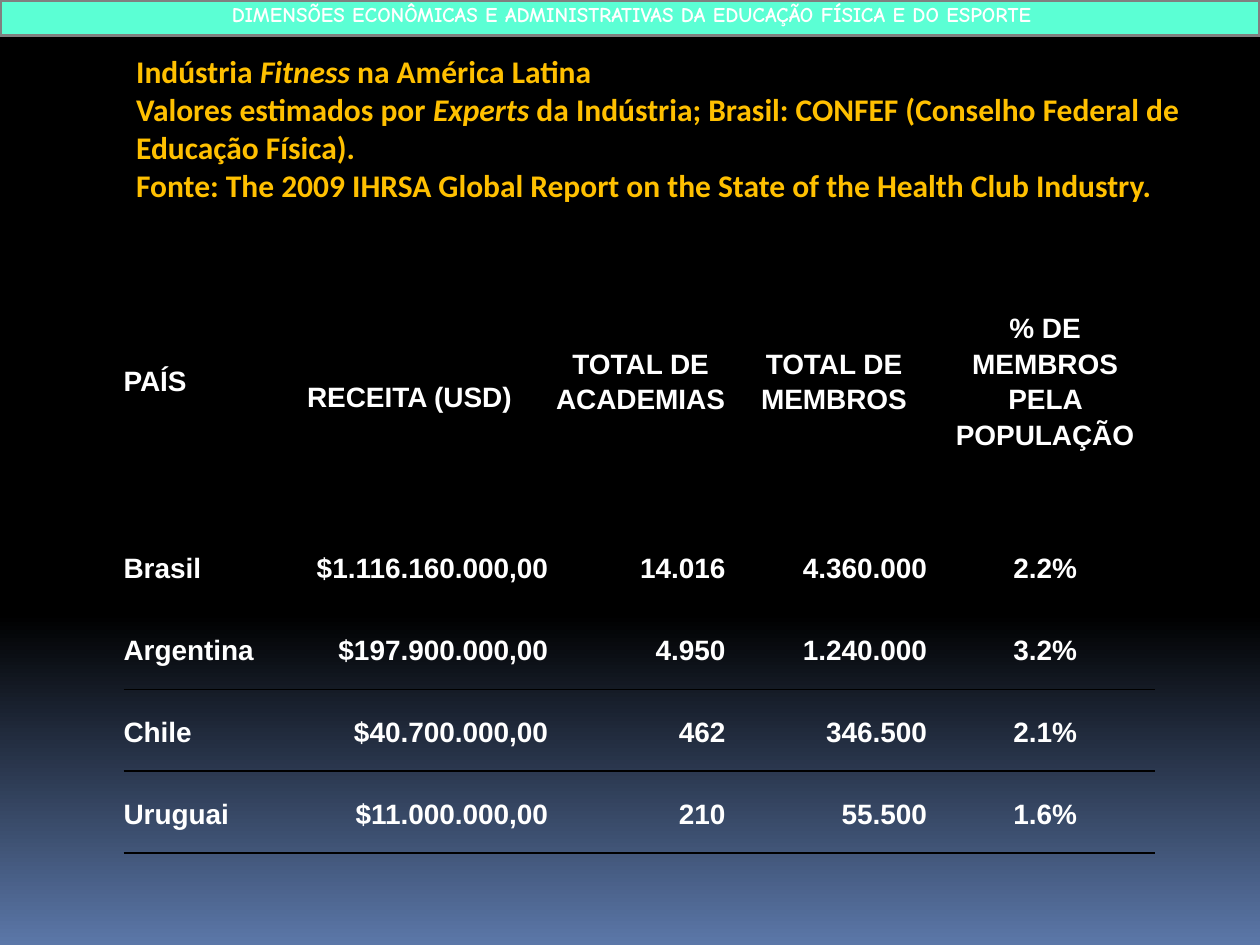
"""Build the slide on the fitness industry in Latin America."""
from copy import deepcopy
from dataclasses import dataclass
from typing import Any

from lxml.etree import SubElement
from pptx import Presentation
from pptx.dml.color import RGBColor
from pptx.enum.shapes import MSO_SHAPE
from pptx.enum.text import MSO_ANCHOR, MSO_AUTO_SIZE, PP_ALIGN
from pptx.oxml import parse_xml
from pptx.oxml.ns import nsdecls, qn
from pptx.util import Pt


@dataclass(frozen=True)
class Theme:
    """Colours, fonts and type sizes of the slide."""
    white: str = "FFFFFF"
    black: str = "000000"
    gold: str = "FFC000"
    mint: str = "5BFFD4"
    grey: str = "808080"
    blue: str = "5B77A8"
    band_font: str = "Comic Neue"
    title_font: str = "Calibri"
    table_font: str = "Arial"
    band_size: int = 12
    title_size: int = 18
    table_size: int = 16


@dataclass(frozen=True)
class Column:
    """One table column with its heading and body layout."""
    heading: tuple[str, ...]
    width: float
    align: PP_ALIGN
    heading_align: PP_ALIGN = PP_ALIGN.CENTER
    heading_top: float = 0
    body_right: float = 0


THEME = Theme()
BAND_TEXT = "DIMENSÕES ECONÔMICAS E ADMINISTRATIVAS DA EDUCAÇÃO FÍSICA E DO ESPORTE"
TITLE = (
    (("Indústria ", False), ("Fitness", True), (" na América Latina", False)),
    (("Valores estimados por ", False), ("Experts", True),
     (" da Indústria; Brasil: CONFEF (Conselho Federal de Educação Física).", False)),
    (("Fonte: The 2009 IHRSA Global Report on the State of the Health Club Industry.", False),),
)
COLUMNS = (
    Column(("PAÍS",), 84.2, PP_ALIGN.JUSTIFY, PP_ALIGN.JUSTIFY),
    Column(("RECEITA (USD)",), 158.4, PP_ALIGN.RIGHT, heading_top=18),
    Column(("TOTAL DE", "ACADEMIAS"), 105.8, PP_ALIGN.RIGHT, body_right=4.5),
    Column(("TOTAL DE", "MEMBROS"), 115.2, PP_ALIGN.RIGHT, body_right=4.5),
    Column(("% DE MEMBROS PELA POPULAÇÃO",), 126, PP_ALIGN.CENTER),
)
COUNTRIES = (
    ("Brasil", "$1.116.160.000,00", "14.016", "4.360.000", "2.2%"),
    ("Argentina", "$197.900.000,00", "4.950", "1.240.000", "3.2%"),
    ("Chile", "$40.700.000,00", "462", "346.500", "2.1%"),
    ("Uruguai", "$11.000.000,00", "210", "55.500", "1.6%"),
)
HEADING_HEIGHT, BODY_HEIGHT = 166.4, 46.8
NO_STYLE = "{2D5ABB26-0587-4C30-8999-92F81FD0307C}"


def apply(target: Any, values: dict[str, Any]) -> None:
    """Set every attribute named in values."""
    for name, value in values.items():
        setattr(target, name, value)


def add_span(para: Any, text: str, font: str, size: float, color: str,
             italic: bool = False) -> None:
    """Add one bold run to a paragraph."""
    span = para.add_run()
    span.text = text
    apply(span.font, {"name": font, "size": Pt(size), "bold": True, "italic": italic})
    span.font.color.rgb = RGBColor.from_string(color)


def paragraph_at(frame: Any, index: int) -> Any:
    """Return the first paragraph or a new one after it."""
    return frame.add_paragraph() if index else frame.paragraphs[0]


def paint_background(page: Any) -> None:
    """Fill the page with a black to blue gradient running downwards."""
    fill = page.background.fill
    fill.gradient()
    fill.gradient_angle = 270
    stops = page.element.find(".//" + qn("a:gsLst"))
    stops.insert(0, deepcopy(stops[0]))
    palette = ((0, THEME.black), (0.65, THEME.black), (1, THEME.blue))
    for stop, (position, color) in zip(fill.gradient_stops, palette):
        stop.position = position
        stop.color.rgb = RGBColor.from_string(color)


def draw_title(page: Any) -> None:
    """Place and write the slide title."""
    box = page.shapes.title
    apply(box, {"left": Pt(70.6), "top": Pt(26), "width": Pt(617.8), "height": Pt(94.3)})
    frame = box.text_frame
    apply(frame, {"word_wrap": True, "vertical_anchor": MSO_ANCHOR.MIDDLE,
                  "auto_size": MSO_AUTO_SIZE.SHAPE_TO_FIT_TEXT})
    for index, spans in enumerate(TITLE):
        para = paragraph_at(frame, index)
        apply(para, {"alignment": PP_ALIGN.LEFT, "space_before": Pt(0), "line_spacing": 1.0})
        for text, italic in spans:
            add_span(para, text, THEME.title_font, THEME.title_size, THEME.gold, italic)


def draw_band(page: Any) -> None:
    """Draw the grouped band with the course name."""
    group = page.shapes.add_group_shape()
    band = group.shapes.add_shape(MSO_SHAPE.RECTANGLE, Pt(0), Pt(0), Pt(720), Pt(20.2))
    band.shadow.inherit = False
    band.fill.solid()
    band.fill.fore_color.rgb = RGBColor.from_string(THEME.mint)
    band.line.color.rgb = RGBColor.from_string(THEME.grey)
    band.line.width = Pt(2)
    box = group.shapes.add_textbox(Pt(25.2), Pt(0), Pt(671.8), Pt(18.7))
    apply(box.text_frame, {"word_wrap": True, "auto_size": MSO_AUTO_SIZE.SHAPE_TO_FIT_TEXT})
    para = box.text_frame.paragraphs[0]
    apply(para, {"alignment": PP_ALIGN.CENTER, "line_spacing": 0.8})
    add_span(para, BAND_TEXT, THEME.band_font, THEME.band_size, THEME.white)


def rule_cell(cell: Any) -> None:
    """Give a cell black rules above and below and none at its sides."""
    cell.fill.background()
    properties = cell._tc.get_or_add_tcPr()
    for index, side in enumerate(("lnL", "lnR", "lnT", "lnB")):
        edge = parse_xml(f'<a:{side} {nsdecls("a")} w="{Pt(1)}"/>')
        if side in ("lnT", "lnB"):
            SubElement(SubElement(edge, qn("a:solidFill")), qn("a:srgbClr"), val=THEME.black)
        else:
            SubElement(edge, qn("a:noFill"))
        properties.insert(index, edge)


def write_cell(cell: Any, lines: tuple[str, ...], align: PP_ALIGN,
               top: float = 0, right: float = 0) -> None:
    """Write and format one table cell."""
    apply(cell, {"margin_left": Pt(0), "margin_right": Pt(right), "margin_top": Pt(top),
                 "margin_bottom": Pt(0), "vertical_anchor": MSO_ANCHOR.MIDDLE})
    rule_cell(cell)
    for index, text in enumerate(lines):
        para = paragraph_at(cell.text_frame, index)
        apply(para, {"alignment": align, "line_spacing": 1.15})
        add_span(para, text, THEME.table_font, THEME.table_size, THEME.white)


def draw_table(page: Any) -> None:
    """Draw the table of countries."""
    width = sum(column.width for column in COLUMNS)
    height = HEADING_HEIGHT + BODY_HEIGHT * len(COUNTRIES)
    frame = page.shapes.add_table(len(COUNTRIES) + 1, len(COLUMNS),
                                  Pt(70.6), Pt(133.9), Pt(width), Pt(height))
    table = frame.table
    apply(table, {"first_row": False, "horz_banding": False})
    table._tbl.tblPr.find(qn("a:tableStyleId")).text = NO_STYLE
    for index, row in enumerate(table.rows):
        row.height = Pt(BODY_HEIGHT if index else HEADING_HEIGHT)
    for index, column in enumerate(COLUMNS):
        table.columns[index].width = Pt(column.width)
        write_cell(table.cell(0, index), column.heading, column.heading_align,
                   top=column.heading_top)
        for row, country in enumerate(COUNTRIES, start=1):
            write_cell(table.cell(row, index), (country[index],), column.align,
                       right=column.body_right)


def main() -> None:
    """Build and save the deck."""
    deck = Presentation()
    apply(deck, {"slide_width": Pt(720), "slide_height": Pt(540)})
    page = deck.slides.add_slide(deck.slide_layouts[5])
    paint_background(page)
    draw_table(page)
    draw_title(page)
    draw_band(page)
    deck.save("out.pptx")


if __name__ == "__main__":
    main()
